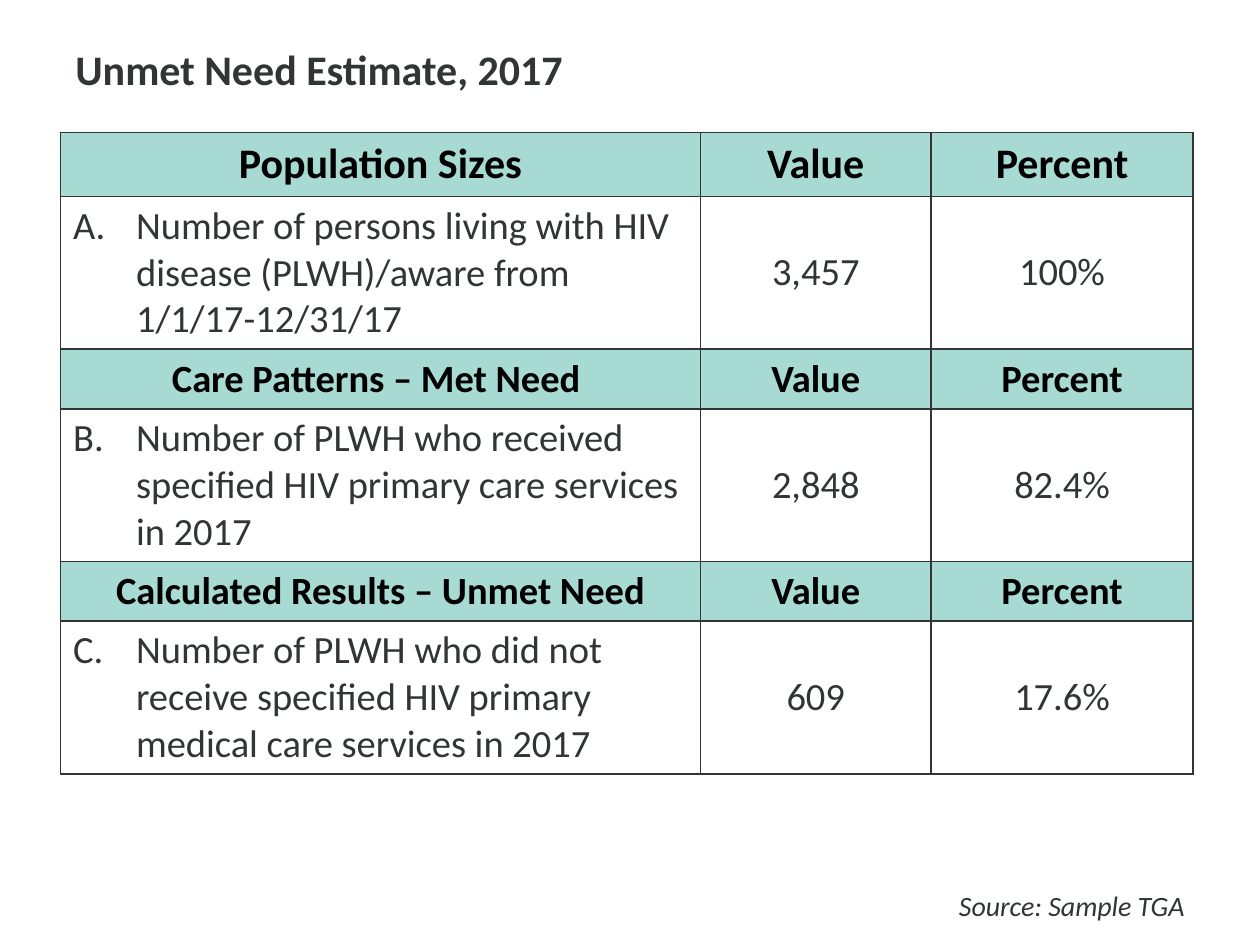
from dataclasses import dataclass

from lxml import etree
from pptx import Presentation
from pptx import util as u
from pptx.dml.color import RGBColor
from pptx.enum import text
from pptx.oxml.ns import qn


@dataclass(frozen=True)
class Theme:
    face: str = "Calibri"
    ink: str = "313534"
    black: str = "000000"
    mint: str = "A7DAD2"
    white: str = "FFFFFF"
    head: int = 24
    body: int = 22
    note: int = 16
    rule: int = 1


class Deck:
    def __init__(self, theme, wide, high):
        self.theme = theme
        self.prs = Presentation()
        self.prs.slide_width, self.prs.slide_height = u.Cm(wide), u.Cm(high)
        self.slide = self.prs.slides.add_slide(self.prs.slide_layouts[6])

    def words(self, frame, words, align, color, **form):
        para = frame.paragraphs[0]
        para.alignment = align
        run = para.add_run()
        run.text = words
        form["name"] = self.theme.face
        form["size"] = u.Pt(form["size"])
        for key, val in form.items():
            setattr(run.font, key, val)
        run.font.color.rgb = RGBColor.from_string(color)
        return para

    def label(self, box, words, align, **form):
        shape = self.slide.shapes.add_textbox(*map(u.Cm, box))
        shape.text_frame.word_wrap = True
        self.words(shape.text_frame, words, align, self.theme.ink, **form)

    def border(self, cell):
        props = cell._tc.get_or_add_tcPr()
        for spot, side in enumerate(("lnL", "lnR", "lnT", "lnB")):
            line = etree.Element(qn(f"a:{side}"), w=str(u.Pt(self.theme.rule)))
            fill = etree.SubElement(line, qn("a:solidFill"))
            etree.SubElement(fill, qn("a:srgbClr"), val=self.theme.ink)
            props.insert(spot, line)

    def letter(self, para, start):
        props = para._p.get_or_add_pPr()
        hang = u.Cm(1.27)
        props.set("marL", str(hang))
        props.set("indent", str(-hang))
        etree.SubElement(props, qn("a:buFont"), typeface="+mj-lt")
        etree.SubElement(props, qn("a:buAutoNum"),
                         type="alphaUcPeriod", startAt=str(start))

    def cell(self, cell, words, align, fill, color, **form):
        cell.vertical_anchor = text.MSO_ANCHOR.MIDDLE
        cell.fill.solid()
        cell.fill.fore_color.rgb = RGBColor.from_string(fill)
        self.border(cell)
        return self.words(cell.text_frame, words, align, color, **form)

    def table(self, left, top, cols, highs, rows):
        look = self.theme
        frame = self.slide.shapes.add_table(
            len(rows), len(cols), u.Cm(left), u.Cm(top),
            u.Cm(sum(cols)), u.Cm(sum(highs)))
        grid = frame.table
        grid.first_row = grid.horz_banding = False
        for col, wide in zip(grid.columns, cols):
            col.width = u.Cm(wide)
        for r, (row, high) in enumerate(zip(rows, highs)):
            grid.rows[r].height = u.Cm(high)
            band = r % 2 == 0
            fill, color = (look.mint, look.black) if band else (look.white, look.ink)
            size = look.body if r else look.head
            for c, words in enumerate(row):
                item = not band and c == 0
                align = text.PP_ALIGN.LEFT if item else text.PP_ALIGN.CENTER
                para = self.cell(grid.cell(r, c), words, align, fill, color,
                                 size=size, bold=band)
                if item:
                    self.letter(para, r // 2 + 1)


def main():
    look = Theme()
    deck = Deck(look, 25.4, 19.05)
    deck.label((1.27, 0.76, 22.86, 3.18), "Unmet Need Estimate, 2017",
               text.PP_ALIGN.LEFT, size=look.head, bold=True)
    heads = ("Value", "Percent")
    rows = [
        ("Population Sizes", *heads),
        ("Number of persons living with HIV disease (PLWH)/aware from "
         "1/1/17-12/31/17", "3,457", "100%"),
        ("Care Patterns – Met Need ", *heads),
        ("Number of PLWH who received specified HIV primary care services "
         "in 2017", "2,848", "82.4%"),
        ("Calculated Results – Unmet Need", *heads),
        ("Number of PLWH who did not receive specified HIV primary medical "
         "care services in 2017", "609", "17.6%"),
    ]
    deck.table(1.22, 2.67, (12.9, 4.65, 5.28),
               (1.29, 3.08, 1.2, 3.08, 1.2, 3.08), rows)
    deck.label((1.27, 17.78, 22.86, 0.94), "Source: Sample TGA",
               text.PP_ALIGN.RIGHT, size=look.note, italic=True)
    deck.prs.save("out.pptx")


if __name__ == "__main__":
    main()
